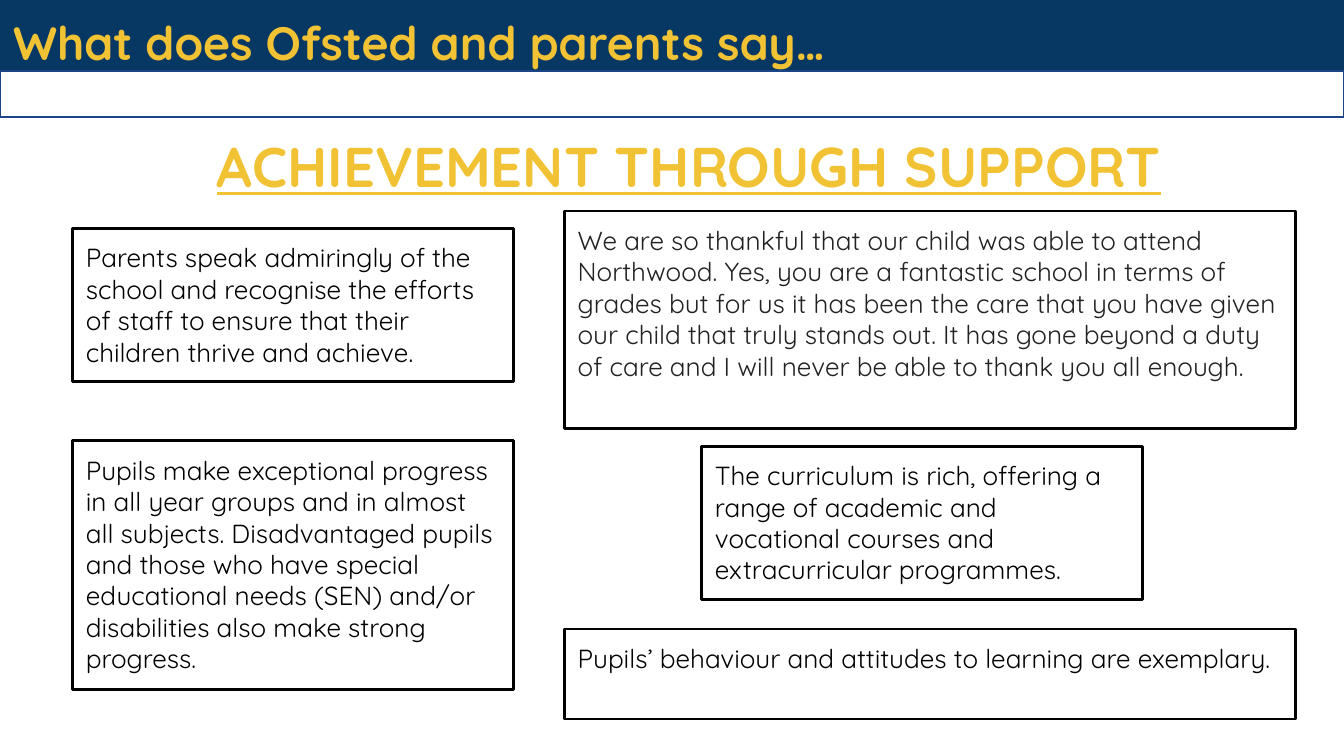
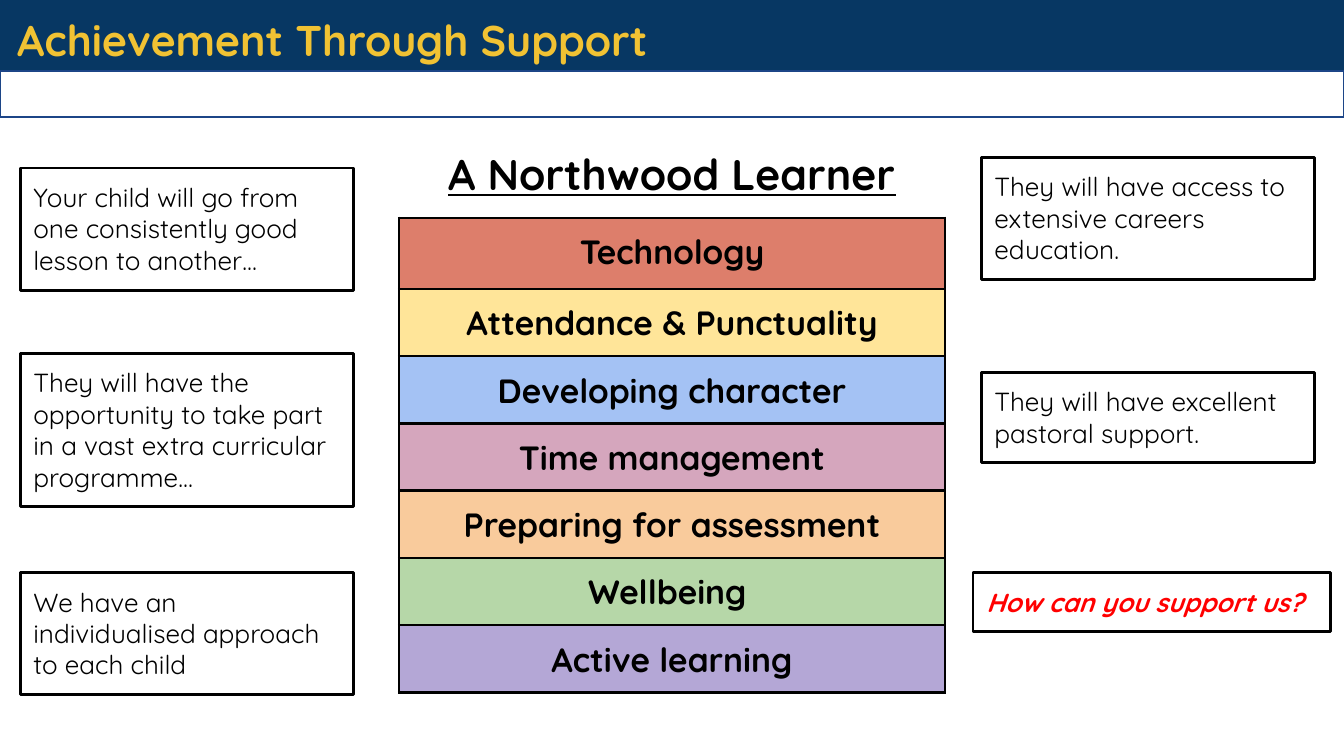
"""Build two school slides about achievement through support."""
import lxml.etree
import pptx
import pptx.dml.color
import pptx.enum.shapes
import pptx.enum.text
import pptx.oxml.ns
import pptx.util

Inches = pptx.util.Inches
Pt = pptx.util.Pt
FONT = "Quicksand"
HUES = {
    "navy": "073763", "blue": "1C4587", "gold": "F1C233", "white": "FFFFFF",
    "black": "000000", "grey": "222222", "red": "FF0000",
}
TRAITS = [
    ("Technology", "DD7E6B"),
    ("Attendance & Punctuality", "FFE599"),
    ("Developing character", "A4C2F4"),
    ("Time management", "D5A6BD"),
    ("Preparing for assessment", "F9CB9C"),
    ("Wellbeing ", "B6D7A8"),
    ("Active learning", "B4A7D6"),
]
QUOTES = [
    ((0.54, 3.28, 3.28, 1.85), "Pupils make exceptional progress in all year groups and in "
     "almost all subjects. Disadvantaged pupils and those who have special educational needs "
     "(SEN) and/or disabilities also make strong progress.", {}),
    ((4.2, 4.68, 5.44, 0.67),
     "Pupils’ behaviour and attitudes to learning are exemplary.", {}),
    ((5.22, 3.32, 3.28, 1.14), "The curriculum is rich, offering a range of academic and "
     "vocational courses and extracurricular programmes.", {}),
    ((0.54, 1.7, 3.28, 1.14), "Parents speak admiringly of the school and recognise the "
     "efforts of staff to ensure that their children thrive and achieve.", {}),
    ((4.2, 1.57, 5.44, 1.62), "We are so thankful that our child was able to attend "
     "Northwood. Yes, you are a fantastic school in terms of grades but for us it has been "
     "the care that you have given our child that truly stands out. It has gone beyond a duty "
     "of care and I will never be able to thank you all enough.", {"hue": "grey"}),
]
OFFERS = [
    ((0.15, 1.25, 2.48, 0.91),
     "Your child will go from one consistently good lesson to another…", {}),
    ((7.3, 2.77, 2.48, 0.67), "They will have excellent pastoral support.", {}),
    ((7.3, 1.17, 2.48, 0.91), "They will have access to extensive careers education.", {}),
    ((0.15, 2.63, 2.48, 1.14),
     "They will have the opportunity to take part in a vast extra curricular programme…", {}),
    ((7.24, 4.26, 2.66, 0.44), "How can you support us?",
     {"hue": "red", "bold": True, "slant": True}),
    ((0.15, 4.26, 2.48, 0.91), "We have an individualised approach to each child", {}),
]


def tint(code):
    """Return the colour for a hex string."""
    return pptx.dml.color.RGBColor.from_string(code)


def write(frame, text, size=14, hue="black", bold=False, slant=False, under=False,
          align="LEFT"):
    """Fill a text frame with one styled paragraph and return it."""
    frame.text = text
    frame.word_wrap = True
    para = frame.paragraphs[0]
    para.alignment = getattr(pptx.enum.text.PP_ALIGN, align)
    font = para.runs[0].font
    font.name, font.size = FONT, Pt(size)
    font.bold, font.italic, font.underline = bold, slant, under
    font.color.rgb = tint(HUES[hue])
    return para


def inset(part):
    """Give a text frame or a cell even margins and top alignment."""
    part.margin_left = part.margin_right = Inches(0.1)
    part.margin_top = part.margin_bottom = Inches(0.1)
    part.vertical_anchor = pptx.enum.text.MSO_ANCHOR.TOP


def label(slide, box, text, **style):
    """Add a plain text box and return its paragraph."""
    frame = slide.shapes.add_textbox(*map(Inches, box)).text_frame
    inset(frame)
    return write(frame, text, **style)


def block(slide, box, line, width, fill=None):
    """Add an outlined rectangle with an optional fill."""
    shape = slide.shapes.add_shape(
        pptx.enum.shapes.MSO_SHAPE.RECTANGLE, *map(Inches, box))
    shape.shadow.inherit = False
    shape.line.color.rgb = tint(HUES[line])
    shape.line.width = Pt(width)
    if fill:
        shape.fill.solid()
        shape.fill.fore_color.rgb = tint(HUES[fill])
    else:
        shape.fill.background()
    return shape


def header(slide, box, title, size):
    """Draw the two bands and the title over them."""
    block(slide, (0, 0, 10, 0.52), "navy", 0.75, "navy")
    block(slide, (0, 0.53, 10, 0.34), "blue", 0.75, "white")
    label(slide, box, title, size=size, hue="gold", bold=True)


def cards(slide, items):
    """Draw the framed statements."""
    for box, text, style in items:
        frame = block(slide, box, "black", 1.5).text_frame
        inset(frame)
        write(frame, text, **style)


def border(cell):
    """Draw a black line on each side of a cell."""
    props = cell._tc.get_or_add_tcPr()
    name = pptx.oxml.ns.qn
    for side in "LRTB":
        line = lxml.etree.SubElement(props, name(f"a:ln{side}"), w=str(Pt(1.5)))
        fill = lxml.etree.SubElement(line, name("a:solidFill"))
        lxml.etree.SubElement(fill, name("a:srgbClr"), val=HUES["black"])


def ladder(slide, box):
    """Draw the learner traits as a one-column table."""
    grid = slide.shapes.add_table(len(TRAITS), 1, *map(Inches, box)).table
    grid.first_row = grid.horz_banding = False
    for index, (text, fill) in enumerate(TRAITS):
        grid.rows[index].height = Inches(0.5 if index else 0.53)
        cell = grid.cell(index, 0)
        inset(cell)
        border(cell)
        cell.fill.solid()
        cell.fill.fore_color.rgb = tint(fill)
        write(cell.text_frame, text, size=18, bold=True, align="CENTER")


def voices(slide):
    """Build the slide of statements about the school."""
    header(slide, (0, 0, 9.67, 0.62), "What does Ofsted and parents say…", 25)
    para = label(slide, (0.14, 0.82, 9.47, 3.99), "ACHIEVEMENT THROUGH SUPPORT",
                 size=30, hue="gold", bold=True, under=True, align="CENTER")
    para.line_spacing = 1.12
    props = para._p.get_or_add_pPr()
    props.set("marL", str(Inches(0.5)))
    props.set("indent", "0")
    cards(slide, QUOTES)


def learner(slide):
    """Build the slide of learner traits and school offers."""
    header(slide, (0.03, 0, 9.59, 0.59), "Achievement Through Support", 23)
    ladder(slide, (2.97, 1.62, 4.06, 3.53))
    para = label(slide, (2.97, 0.95, 4.06, 0.59), "A Northwood Learner",
                 size=23, bold=True, under=True, align="CENTER")
    para.line_spacing = 1.12
    para.space_after = Pt(14)
    cards(slide, OFFERS)


def main():
    """Create and save the deck in the 16:9 format."""
    deck = pptx.Presentation()
    deck.slide_width = Inches(10)
    deck.slide_height = Inches(10 * 9 / 16)
    for build in (voices, learner):
        build(deck.slides.add_slide(deck.slide_layouts[6]))
    deck.save("out.pptx")


if __name__ == "__main__":
    main()
